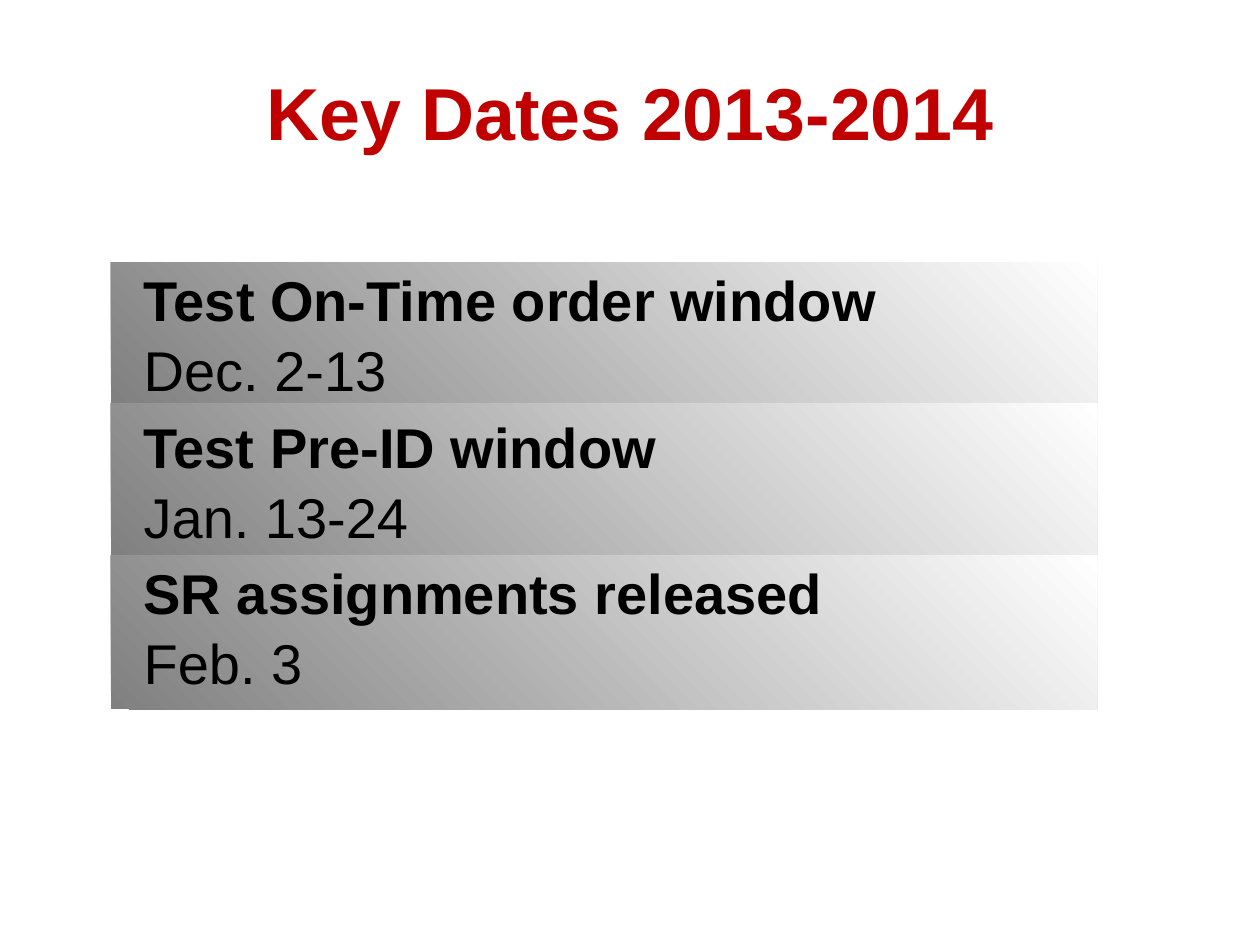
import dataclasses

import lxml.etree
import pptx
import pptx.dml.color
import pptx.enum.shapes
import pptx.enum.text
import pptx.oxml.ns
import pptx.presentation
import pptx.shapes.base
import pptx.slide
import pptx.text.text
import pptx.util
from pptx.util import Inches


@dataclasses.dataclass(frozen=True)
class Theme:
    font: str = "Arial"
    title_size: int = 42
    date_size: int = 32
    line_spacing: float = 1.05
    title_color: str = "C00000"
    text_color: str = "000000"
    band_dark: str = "808080"
    band_light: str = "FFFFFF"


@dataclasses.dataclass(frozen=True)
class KeyDate:
    event: str
    date: str
    band_height: float
    text_width: float
    text_height: float


THEME = Theme()
BAND_LEFT, BAND_TOP, BAND_WIDTH = 0.88, 2.08, 7.83
TEXT_LEFT = 1.14
KEY_DATES = [
    KeyDate("Test On-Time order window ", "Dec. 2-13", 1.12, 6.03, 1.12),
    KeyDate("Test Pre-ID window ", "Jan. 13-24", 1.21, 4.9, 1.21),
    KeyDate("SR assignments released ", "Feb. 3", 1.22, 5.87, 1.11),
]


def place(shape: pptx.shapes.base.BaseShape, left: float, top: float,
          width: float, height: float) -> None:
    shape.left, shape.top = Inches(left), Inches(top)
    shape.width, shape.height = Inches(width), Inches(height)


def bring_to_front(shape: pptx.shapes.base.BaseShape) -> None:
    shape.element.getparent().append(shape.element)


def prepare_frame(frame: pptx.text.text.TextFrame,
                  anchor: pptx.enum.text.MSO_ANCHOR,
                  alignment: pptx.enum.text.PP_ALIGN) -> pptx.text.text._Paragraph:
    """Set up a frame without margins and return its first paragraph."""
    frame.margin_left = frame.margin_right = 0
    frame.margin_top = frame.margin_bottom = 0
    frame.word_wrap = True
    frame.auto_size = pptx.enum.text.MSO_AUTO_SIZE.NONE
    frame.vertical_anchor = anchor
    paragraph = frame.paragraphs[0]
    paragraph.alignment = alignment
    paragraph.line_spacing = THEME.line_spacing
    paragraph.space_before = pptx.util.Pt(0)
    return paragraph


def add_run(paragraph: pptx.text.text._Paragraph, text: str, size: int,
            color: str, bold: bool) -> None:
    run = paragraph.add_run()
    run.text = text
    run.font.name = THEME.font
    run.font.size = pptx.util.Pt(size)
    run.font.bold = bold
    run.font.color.rgb = pptx.dml.color.RGBColor.from_string(color)


def remove_bullet(paragraph: pptx.text.text._Paragraph) -> None:
    properties = paragraph._p.get_or_add_pPr()
    properties.set("marL", "0")
    properties.set("indent", "0")
    lxml.etree.SubElement(properties, pptx.oxml.ns.qn("a:buNone"))


def draw_band(slide: pptx.slide.Slide, top: float, height: float) -> None:
    band = slide.shapes.add_shape(
        pptx.enum.shapes.MSO_SHAPE.RECTANGLE,
        Inches(BAND_LEFT), Inches(top), Inches(BAND_WIDTH), Inches(height))
    band.shadow.inherit = False
    band.line.fill.background()
    band.fill.gradient()
    band.fill.gradient_angle = 45
    for stop, color in zip(band.fill.gradient_stops,
                           (THEME.band_dark, THEME.band_light)):
        stop.color.rgb = pptx.dml.color.RGBColor.from_string(color)


def write_key_date(holder: pptx.shapes.base.BaseShape, key_date: KeyDate,
                   top: float) -> None:
    place(holder, TEXT_LEFT, top, key_date.text_width, key_date.text_height)
    paragraph = prepare_frame(holder.text_frame, pptx.enum.text.MSO_ANCHOR.MIDDLE,
                              pptx.enum.text.PP_ALIGN.LEFT)
    remove_bullet(paragraph)
    for text, bold in ((key_date.event, True), (key_date.date, False)):
        add_run(paragraph, text, THEME.date_size, THEME.text_color, bold)


def write_title(title: pptx.shapes.base.BaseShape) -> None:
    place(title, 0.5, 0.5, 9, 0.71)
    paragraph = prepare_frame(title.text_frame, pptx.enum.text.MSO_ANCHOR.TOP,
                              pptx.enum.text.PP_ALIGN.CENTER)
    title.text_frame.auto_size = pptx.enum.text.MSO_AUTO_SIZE.SHAPE_TO_FIT_TEXT
    add_run(paragraph, "Key Dates 2013-2014", THEME.title_size,
            THEME.title_color, True)


def main() -> None:
    deck = pptx.Presentation()
    deck.slide_width, deck.slide_height = Inches(10), Inches(7.5)
    slide = deck.slides.add_slide(deck.slide_layouts[1])

    # Title
    write_title(slide.shapes.title)

    # Stacked bands, the first one holding the body placeholder
    top = BAND_TOP
    for index, key_date in enumerate(KEY_DATES):
        draw_band(slide, top, key_date.band_height)
        if index == 0:
            holder = slide.placeholders[1]
            bring_to_front(holder)
        else:
            holder = slide.shapes.add_textbox(0, 0, 0, 0)
        write_key_date(holder, key_date, top)
        top += key_date.band_height

    deck.save("out.pptx")


if __name__ == "__main__":
    main()
